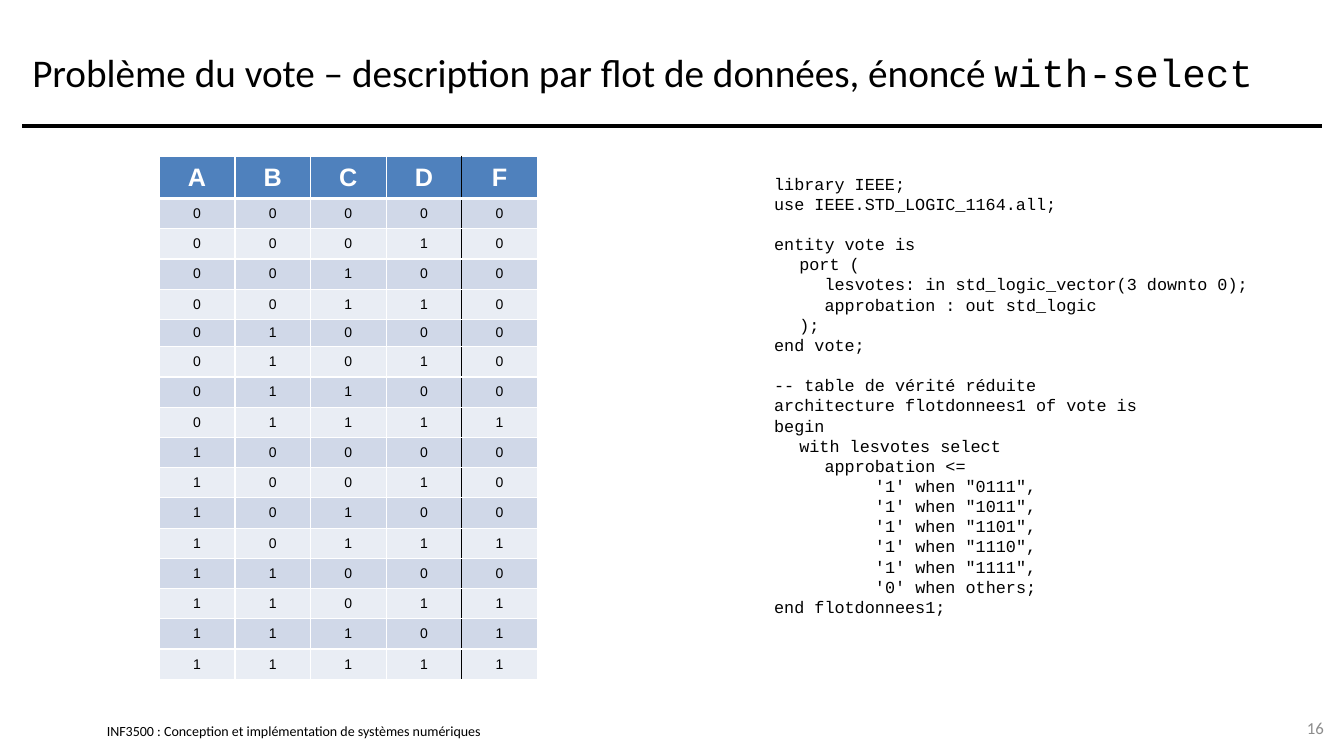
"""Build the slide on the vote problem: truth table and VHDL with-select code."""
from itertools import product

from lxml.etree import SubElement
from pptx import Presentation
from pptx.dml.color import RGBColor
from pptx.enum.shapes import MSO_CONNECTOR
from pptx.enum.text import MSO_ANCHOR, MSO_AUTO_SIZE, PP_ALIGN
from pptx.oxml.ns import qn
from pptx.util import Inches, Pt

BLACK = RGBColor(0x00, 0x00, 0x00)
WHITE = RGBColor(0xFF, 0xFF, 0xFF)
GREY = RGBColor(0x8C, 0x8C, 0x8C)
BLUE = RGBColor(0x4F, 0x81, 0xBD)
LIGHT = RGBColor(0xE9, 0xED, 0xF4)
DARK = RGBColor(0xD0, 0xD8, 0xE8)
SANS, MONO, PLAIN = "Calibri", "Courier New", "Arial"
PITCH = Pt(14.4)


def style(run, face, size, color, bold=False):
    run.font.name, run.font.size, run.font.bold = face, Pt(size), bold
    run.font.color.rgb = color


def add_text(left, top, width, height, anchor):
    box = slide.shapes.add_textbox(
        Inches(left), Inches(top), Inches(width), Inches(height))
    box.text_frame.word_wrap = True
    box.text_frame.vertical_anchor = anchor
    return box.text_frame


deck = Presentation()
deck.slide_width, deck.slide_height = Inches(13.33), Inches(7.5)
slide = deck.slides.add_slide(deck.slide_layouts[5])

title = slide.shapes.title
title.left, title.top = Inches(0.22), Inches(0.17)
title.width, title.height = Inches(12.89), Inches(1.08)
title.text_frame.auto_size = MSO_AUTO_SIZE.NONE
title.text_frame.vertical_anchor = MSO_ANCHOR.MIDDLE
head = title.text_frame.paragraphs[0]
head.alignment = PP_ALIGN.LEFT
parts = [
    ("Problème du vote – description par flot de données, énoncé ", SANS),
    ("with-select", MONO),
]
for text, face in parts:
    run = head.add_run()
    run.text = text
    style(run, face, 28, BLACK)

rule = slide.shapes.add_connector(
    MSO_CONNECTOR.STRAIGHT,
    Inches(0.22), Inches(1.25), Inches(13.11), Inches(1.25))
rule.line.color.rgb = BLACK
rule.line.width = Pt(3)
SubElement(rule.element.spPr, qn("a:effectLst"))

names = ["A", "B", "C", "D", "F"]
truth = [[*bits, int(sum(bits) >= 3)] for bits in product((0, 1), repeat=4)]
grid = [names] + truth
last = len(names) - 1

table = slide.shapes.add_table(
    len(grid), len(names),
    Inches(1.58), Inches(1.55), Inches(3.75), Inches(5.18)).table
for col in table.columns:
    col.width = Inches(0.75)
for i, row in enumerate(table.rows):
    if i == 0:
        size, ink, paint, under = 18, WHITE, BLUE, 3
    else:
        size, ink, paint, under = 10, BLACK, DARK if i % 2 else LIGHT, 1
    row.height = Inches({0: 0.42, 5: 0.27}.get(i, 0.3))
    for j, cell in enumerate(row.cells):
        edges = [
            ("a:lnL", BLACK if j == last else WHITE, 1),
            ("a:lnR", BLACK if j == last - 1 else WHITE, 1),
            ("a:lnT", WHITE, 1),
            ("a:lnB", WHITE, under),
        ]
        props = cell._tc.get_or_add_tcPr()
        for tag, color, width in edges:
            edge = SubElement(props, qn(tag), w=str(Pt(width)))
            fill = SubElement(edge, qn("a:solidFill"))
            SubElement(fill, qn("a:srgbClr"), val=str(color))
        cell.fill.solid()
        cell.fill.fore_color.rgb = paint
        cell.vertical_anchor = MSO_ANCHOR.MIDDLE
        para = cell.text_frame.paragraphs[0]
        para.text = str(grid[i][j])
        para.alignment = PP_ALIGN.CENTER
        style(para.runs[0], PLAIN, size, ink, bold=i == 0)

wins = ["".join(map(str, bits)) for *bits, vote in truth if vote]
code = [
    (0, "library IEEE;"),
    (0, "use IEEE.STD_LOGIC_1164.all;"),
    (0, "entity vote is"),
    (1, "port ("),
    (2, "lesvotes: in std_logic_vector(3 downto 0);"),
    (2, "approbation : out std_logic"),
    (1, ");"),
    (0, "end vote;"),
    (0, "-- table de vérité réduite"),
    (0, "architecture flotdonnees1 of vote is"),
    (0, "begin"),
    (1, "with lesvotes select"),
    (2, "approbation <="),
    *[(3, f"'1' when \"{bits}\",") for bits in wins],
    (3, "'0' when others;"),
    (0, "end flotdonnees1;"),
]
frame = add_text(7.58, 1.67, 5.03, 4.75, MSO_ANCHOR.TOP)
for i, (depth, text) in enumerate(code):
    para = frame.add_paragraph() if i else frame.paragraphs[0]
    tabs = SubElement(para._p.get_or_add_pPr(), qn("a:tabLst"))
    for stop in (0.25, 0.5):
        SubElement(tabs, qn("a:tab"), pos=str(Inches(stop)), algn="l")
    para.text = "\t" * depth + text
    para.line_spacing = PITCH
    if text.startswith(("entity", "--")):
        para.space_before = PITCH
    style(para.runs[0], MONO, 12, BLACK)

frame = add_text(1.06, 7.17, 5.11, 0.17, MSO_ANCHOR.MIDDLE)
frame.margin_left = frame.margin_right = 0
frame.margin_top = frame.margin_bottom = 0
frame.text = "INF3500 : Conception et implémentation de systèmes numériques"
style(frame.paragraphs[0].runs[0], SANS, 10, BLACK)

frame = add_text(12.56, 7.02, 0.67, 0.4, MSO_ANCHOR.MIDDLE)
frame.text = "16"
frame.paragraphs[0].alignment = PP_ALIGN.RIGHT
style(frame.paragraphs[0].runs[0], SANS, 12, GREY)

deck.save("out.pptx")
